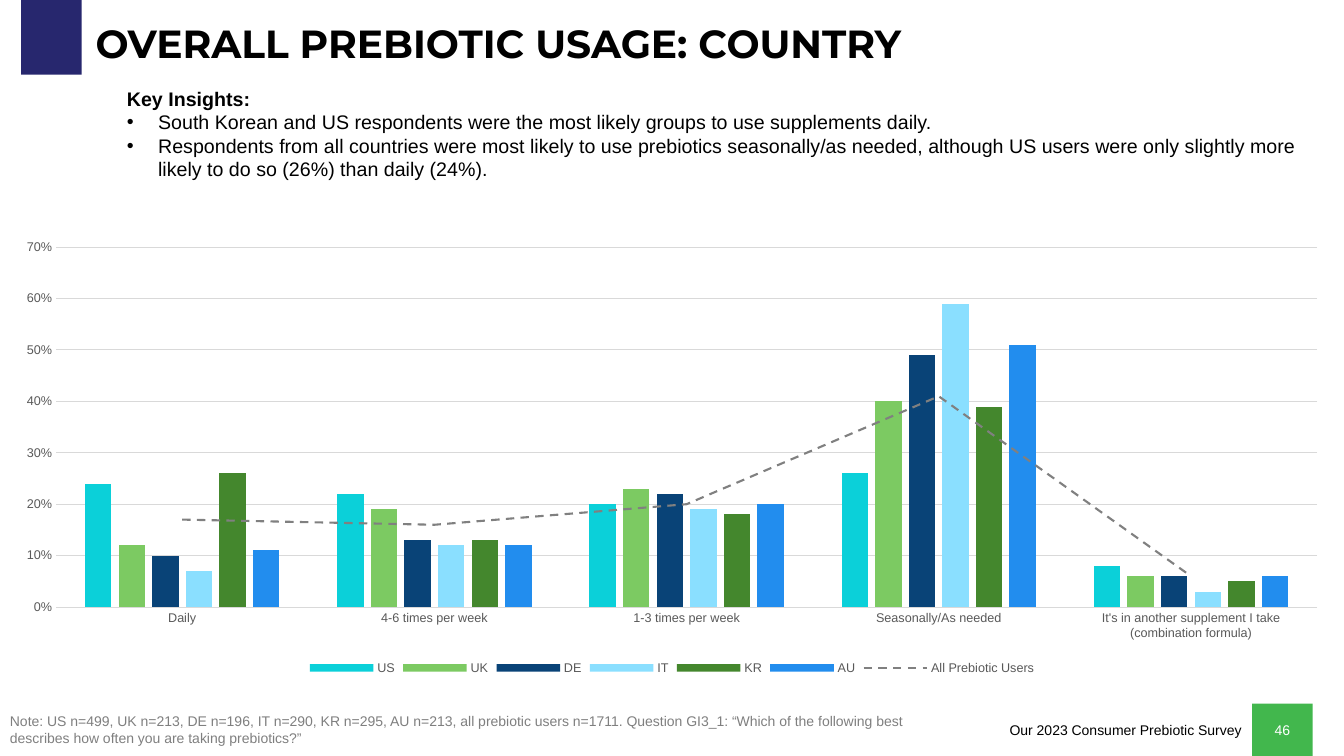
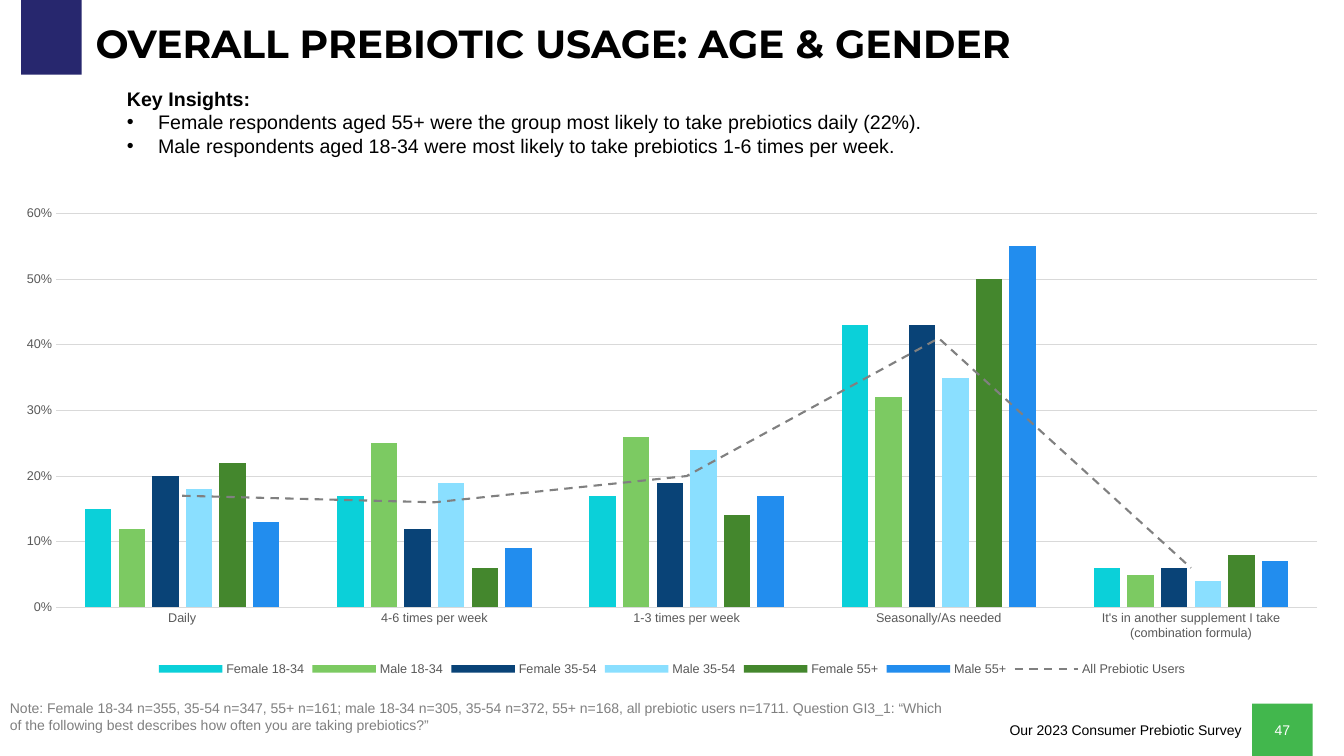
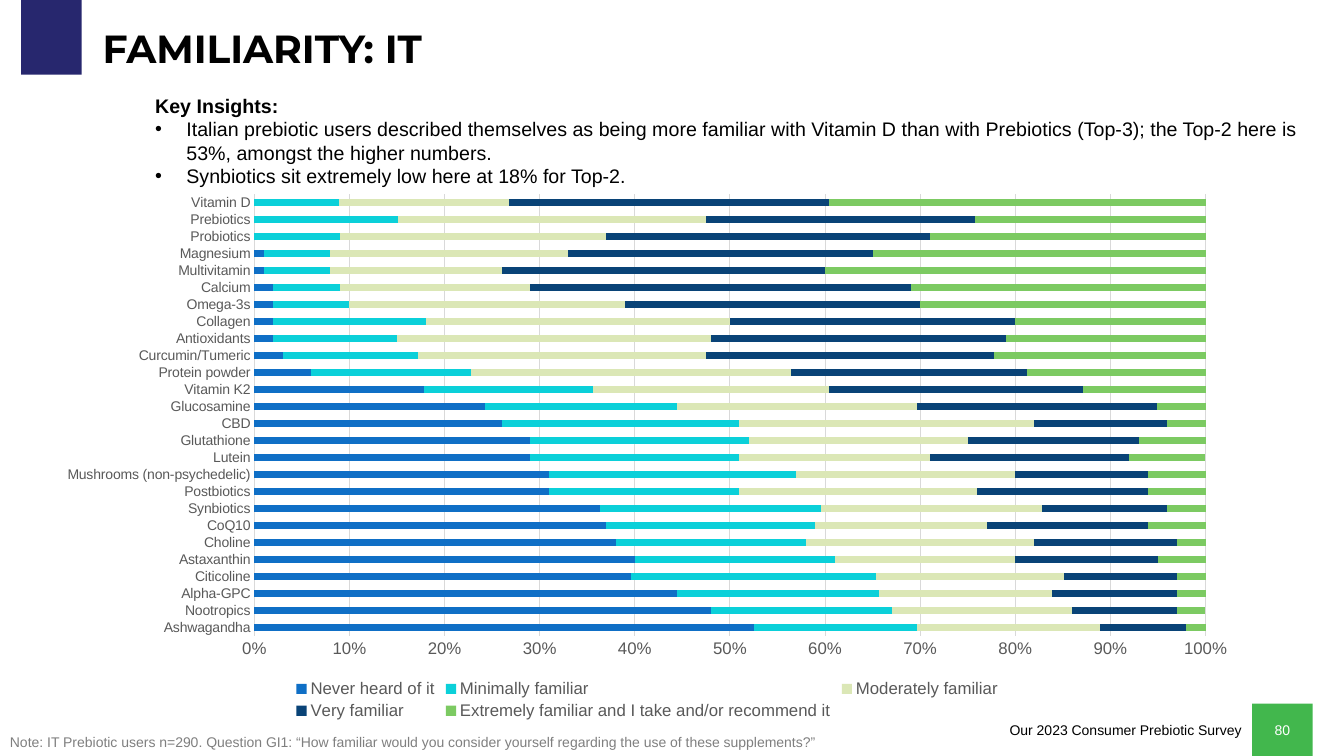
from lxml import etree
from pptx import Presentation
from pptx import util as u
from pptx.chart import data
from pptx.dml import color
from pptx.enum import chart as ch, dml, shapes, text
from pptx.oxml import ns

NAVY, GREEN, GREY, LABEL, RULE = "27276E", "42B74D", "7F7F7F", "595959", "D9D9D9"
CYAN, LIME, DEEP = "0BD0D9", "7CCA62", "094377"
GROUP_COLORS = [CYAN, LIME, DEEP, "8ADFFF", "44872D", "228DEE"]
FAMILIARITY_COLORS = ["0F6FC6", CYAN, "DBE7B6", DEEP, LIME]
FREQUENCIES = ["Daily", "4-6 times per week", "1-3 times per week", "Seasonally/As needed",
               "It's in another supplement I take (combination formula)"]
ALL_USERS = ("All Prebiotic Users", [0.17, 0.16, 0.2, 0.41, 0.06])


def rgb(value):
    return color.RGBColor.from_string(value)


def sub(parent, tag, **attrs):
    return etree.SubElement(parent, ns.qn(tag), attrs)


class Deck:
    def __init__(self):
        self.prs = Presentation()
        self.prs.slide_width, self.prs.slide_height = u.Inches(13.33), u.Inches(7.5)
        self.s = None

    def style(self, font, size, fill="000000", bold=False, name="Arial"):
        font.size, font.name, font.bold = u.Pt(size), name, bold
        font.color.rgb = rgb(fill)

    def run(self, p, words, size, **style):
        r = p.add_run()
        r.text = words
        self.style(r.font, size, **style)

    def slide(self, number):
        self.s = self.prs.slides.add_slide(self.prs.slide_layouts[6])
        self.block((0.21, -0.05, 0.6, 0.79), NAVY)
        p = self.box((7.92, 7.11, 4.49, 0.27)).paragraphs[0]
        p.alignment = text.PP_ALIGN.RIGHT
        self.run(p, "Our 2023 Consumer Prebiotic Survey", 10)
        tf = self.block((12.42, 6.98, 0.6, 0.52), GREEN).text_frame
        tf.vertical_anchor = text.MSO_ANCHOR.MIDDLE
        tf.paragraphs[0].alignment = text.PP_ALIGN.CENTER
        self.run(tf.paragraphs[0], str(number), 10, fill="FFFFFF")

    def block(self, at, fill):
        sp = self.s.shapes.add_shape(shapes.MSO_SHAPE.RECTANGLE, *map(u.Inches, at))
        sp.shadow.inherit = False
        sp.fill.solid()
        sp.fill.fore_color.rgb = rgb(fill)
        sp.line.fill.background()
        return sp

    def box(self, at, grow=True):
        tf = self.s.shapes.add_textbox(*map(u.Inches, at)).text_frame
        tf.word_wrap = True
        if grow:
            tf.auto_size = text.MSO_AUTO_SIZE.SHAPE_TO_FIT_TEXT
        return tf

    def title(self, words, at=(0.85, 0.2, 11.16, 0.5)):
        tf = self.box(at, grow=False)
        tf.vertical_anchor = text.MSO_ANCHOR.MIDDLE
        tf.paragraphs[0].line_spacing = 0.9
        self.run(tf.paragraphs[0], words, 28, bold=True, name="Montserrat")

    def note(self, words, top, width=9.48, height=0.44):
        self.run(self.box((0, top, width, height)).paragraphs[0], words, 10, fill=GREY)

    def insights(self, bullets, at=(1.16, 0.81, 12.18, 1.04)):
        tf = self.box(at)
        self.run(tf.paragraphs[0], "Key Insights:", 14, bold=True)
        indent = u.Inches(0.31)
        for words in bullets:
            p = tf.add_paragraph()
            pPr = p._p.get_or_add_pPr()
            pPr.set("marL", str(indent))
            pPr.set("indent", str(-indent))
            sub(pPr, "a:buFont", typeface="Arial")
            sub(pPr, "a:buChar", char="•")
            self.run(p, words, 14)

    def chart(self, kind, at, cats, series, colors, top, fmt, sizes, gap, overlap):
        cd = data.CategoryChartData(number_format=fmt)
        cd.categories = cats
        for name, values in series:
            cd.add_series(name, values)
        chart = self.s.shapes.add_chart(kind, *map(u.Inches, at), cd).chart
        cat_size, val_size = sizes
        self.style(chart.font, cat_size)
        chart.has_title = False
        chart.has_legend = True
        chart.legend.position = ch.XL_LEGEND_POSITION.BOTTOM
        chart.legend.include_in_layout = False
        self.style(chart.legend.font, val_size, LABEL)
        plot = chart.plots[0]
        plot.vary_by_categories = False
        plot.gap_width, plot.overlap = gap, overlap
        for ser, fill in zip(plot.series, colors):
            ser.format.fill.solid()
            ser.format.fill.fore_color.rgb = rgb(fill)
        cat, val = chart.category_axis, chart.value_axis
        for axis, size in ((cat, cat_size), (val, val_size)):
            axis.major_tick_mark = axis.minor_tick_mark = ch.XL_TICK_MARK.NONE
            self.style(axis.tick_labels.font, size, LABEL)
        val.has_major_gridlines = True
        for line in (cat.format.line, val.major_gridlines.format.line):
            line.color.rgb, line.width = rgb(RULE), u.Pt(0.75)
        val.format.line.fill.background()
        val.minimum_scale, val.maximum_scale, val.major_unit = 0, top, 0.1
        val.tick_labels.number_format = "0%"
        val.tick_labels.number_format_is_linked = False
        return chart

    def usage_chart(self, y, height, groups, top):
        chart = self.chart(ch.XL_CHART_TYPE.COLUMN_CLUSTERED, (0, y, 13.33, height), FREQUENCIES,
                           groups + [ALL_USERS], GROUP_COLORS, top, "0%", (9, 9), 219, -27)
        line = chart.plots[0].series[len(groups)].format.line
        line.color.rgb, line.width = rgb("808080"), u.Pt(1.5)
        line.dash_style = dml.MSO_LINE.DASH
        self.last_as_line(chart)

    def last_as_line(self, chart):
        bars = chart.element.xpath("//c:barChart")[0]
        ser = bars.xpath("c:ser")[-1]
        for flag in ser.xpath("c:invertIfNegative"):
            ser.remove(flag)
        lines = etree.Element(ns.qn("c:lineChart"))
        sub(lines, "c:grouping", val="standard")
        sub(lines, "c:varyColors", val="0")
        lines.append(ser)
        marker = etree.Element(ns.qn("c:marker"))
        sub(marker, "c:symbol", val="none")
        ser.xpath("c:spPr")[0].addnext(marker)
        sub(ser, "c:smooth", val="0")
        sub(lines, "c:marker", val="1")
        for axis in bars.xpath("c:axId"):
            sub(lines, "c:axId", val=axis.get("val"))
        bars.addnext(lines)

    def familiarity_chart(self, rows):
        levels = ["Never heard of it", "Minimally familiar", "Moderately familiar",
                  "Very familiar", "Extremely familiar and I take and/or recommend it"]
        names, *columns = zip(*rows)
        self.chart(ch.XL_CHART_TYPE.BAR_STACKED_100, (0.43, 1.82, 11.98, 5.36), names,
                   list(zip(levels, columns)), FAMILIARITY_COLORS, 1, "0", (10, 12), 150, 100)


def main():
    deck = Deck()

    deck.slide(46)
    deck.note("Note: US n=499, UK n=213, DE n=196, IT n=290, KR n=295, AU n=213, all prebiotic users "
              "n=1711. Question GI3_1: “Which of the following best describes how often you are "
              "taking prebiotics?”", 7.02)
    deck.insights([
        "South Korean and US respondents were the most likely groups to use supplements daily.",
        "Respondents from all countries were most likely to use prebiotics seasonally/as needed, "
        "although US users were only slightly more likely to do so (26%) than daily (24%)."])
    deck.usage_chart(2.29, 4.45, [
        ("US", [0.24, 0.22, 0.2, 0.26, 0.08]),
        ("UK", [0.12, 0.19, 0.23, 0.4, 0.06]),
        ("DE", [0.1, 0.13, 0.22, 0.49, 0.06]),
        ("IT", [0.07, 0.12, 0.19, 0.59, 0.03]),
        ("KR", [0.26, 0.13, 0.18, 0.39, 0.05]),
        ("AU", [0.11, 0.12, 0.2, 0.51, 0.06])], 0.7)
    deck.title("OVERALL PREBIOTIC USAGE: COUNTRY")

    deck.slide(47)
    deck.note("Note: Female 18-34 n=355, 35-54 n=347, 55+ n=161; male 18-34 n=305, 35-54 n=372, "
              "55+ n=168, all prebiotic users n=1711. Question GI3_1: “Which of the following best "
              "describes how often you are taking prebiotics?”", 6.89)
    deck.insights([
        "Female respondents aged 55+ were the group most likely to take prebiotics daily (22%).",
        "Male respondents aged 18-34 were most likely to take prebiotics 1-6 times per week."])
    deck.usage_chart(1.95, 4.8, [
        ("Female 18-34", [0.15, 0.17, 0.17, 0.43, 0.06]),
        ("Male 18-34", [0.12, 0.25, 0.26, 0.32, 0.05]),
        ("Female 35-54", [0.2, 0.12, 0.19, 0.43, 0.06]),
        ("Male 35-54", [0.18, 0.19, 0.24, 0.35, 0.04]),
        ("Female 55+", [0.22, 0.06, 0.14, 0.5, 0.08]),
        ("Male 55+", [0.13, 0.09, 0.17, 0.55, 0.07])], 0.6)
    deck.title("OVERALL PREBIOTIC USAGE: AGE & GENDER")

    deck.slide(80)
    deck.title("FAMILIARITY: IT", (0.92, 0.25, 11.5, 0.5))
    deck.familiarity_chart([
        ("Ashwagandha", 52, 17, 19, 9, 2),
        ("Nootropics", 48, 19, 19, 11, 3),
        ("Alpha-GPC", 44, 21, 18, 13, 3),
        ("Citicoline", 40, 26, 20, 12, 3),
        ("Astaxanthin", 40, 21, 19, 15, 5),
        ("Choline", 38, 20, 24, 15, 3),
        ("CoQ10", 37, 22, 18, 17, 6),
        ("Synbiotics", 36, 23, 23, 13, 4),
        ("Postbiotics", 31, 20, 25, 18, 6),
        ("Mushrooms (non-psychedelic)", 31, 26, 23, 14, 6),
        ("Lutein", 29, 22, 20, 21, 8),
        ("Glutathione", 29, 23, 23, 18, 7),
        ("CBD", 26, 25, 31, 14, 4),
        ("Glucosamine", 24, 20, 25, 25, 5),
        ("Vitamin K2", 18, 18, 25, 27, 13),
        ("Protein powder", 6, 17, 34, 25, 19),
        ("Curcumin/Tumeric", 3, 14, 30, 30, 22),
        ("Antioxidants", 2, 13, 33, 31, 21),
        ("Collagen", 2, 16, 32, 30, 20),
        ("Omega-3s", 2, 8, 29, 31, 30),
        ("Calcium", 2, 7, 20, 40, 31),
        ("Multivitamin", 1, 7, 18, 34, 40),
        ("Magnesium", 1, 7, 25, 32, 35),
        ("Probiotics", 0, 9, 28, 34, 29),
        ("Prebiotics", 0, 15, 32, 28, 24),
        ("Vitamin D", 0, 9, 18, 34, 40)])
    deck.note("Note: IT Prebiotic users n=290. Question GI1: “How familiar would you consider yourself "
              "regarding the use of these supplements?”", 7.23, 8.78, 0.27)
    deck.insights([
        "Italian prebiotic users described themselves as being more familiar with Vitamin D than with "
        "Prebiotics (Top-3); the Top-2 here is 53%, amongst the higher numbers.",
        "Synbiotics sit extremely low here at 18% for Top-2."], (1.44, 0.88, 11.89, 1.28))

    deck.prs.save("out.pptx")


if __name__ == "__main__":
    main()
